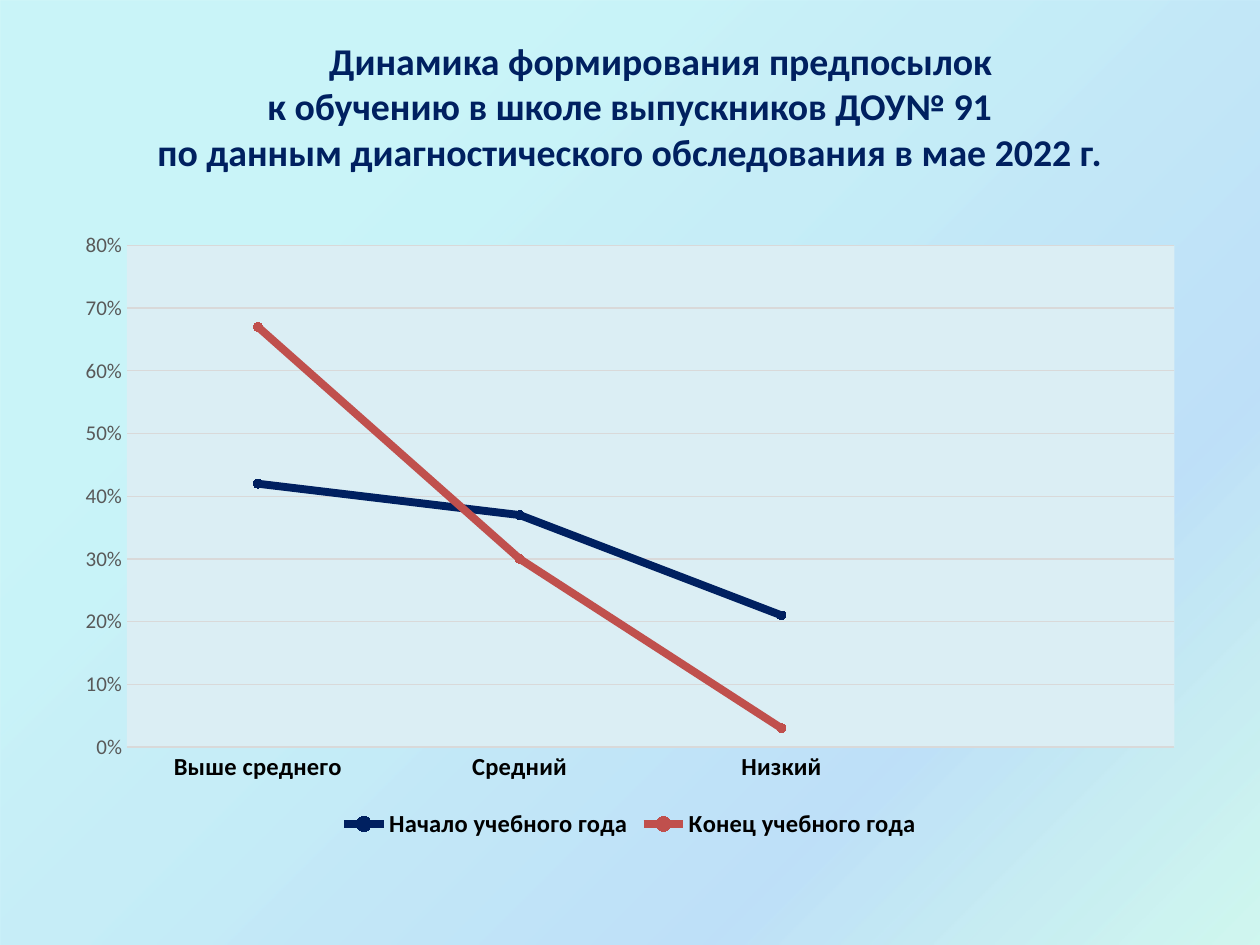
"""Build a slide with a line chart of school readiness at the start and end of the year."""
from dataclasses import dataclass

from lxml import etree
from pptx import Presentation
from pptx.chart.chart import Chart
from pptx.chart.data import CategoryChartData
from pptx.dml.color import RGBColor
from pptx.enum.chart import XL_CHART_TYPE, XL_LEGEND_POSITION, XL_MARKER_STYLE, XL_TICK_MARK
from pptx.enum.shapes import MSO_SHAPE
from pptx.enum.text import MSO_ANCHOR, PP_ALIGN
from pptx.oxml import parse_xml
from pptx.oxml.ns import nsdecls, qn
from pptx.slide import Slide
from pptx.text.text import Font
from pptx.util import Inches, Pt

LINE_MARKERS = XL_CHART_TYPE.LINE_MARKERS
LEGEND_BOTTOM = XL_LEGEND_POSITION.BOTTOM
CIRCLE = XL_MARKER_STYLE.CIRCLE
NO_TICK = XL_TICK_MARK.NONE
RECTANGLE = MSO_SHAPE.RECTANGLE
TOP = MSO_ANCHOR.TOP
CENTER = PP_ALIGN.CENTER


@dataclass(frozen=True)
class Theme:
    font: str = "Calibri"
    navy: str = "002060"
    red: str = "C0504D"
    label: str = "000000"
    scale: str = "595959"
    grid: str = "D9D9D9"
    plot: str = "DBEEF4"
    title_size: float = 21.6
    label_size: float = 14
    scale_size: float = 12


@dataclass(frozen=True)
class GradientStop:
    position: int
    color: str
    opacity: int


@dataclass(frozen=True)
class Period:
    name: str
    shares: tuple[float | None, ...]
    color: str


THEME = Theme()
BACKDROP = (
    GradientStop(25, "21D6E0", 23),
    GradientStop(75, "0087E6", 25),
    GradientStop(100, "03D4A8", 18),
    GradientStop(100, "005CBF", 26),
)
TITLE_LINES = (
    "Динамика формирования предпосылок",
    "к обучению в школе выпускников ДОУ№ 91",
    "по данным диагностического обследования в мае 2022 г.",
)
LEVELS = ("Выше среднего", "Средний", "Низкий", "")
PERIODS = (
    Period("Начало учебного года", (0.42, 0.37, 0.21, None), THEME.navy),
    Period("Конец учебного года", (0.67, 0.3, 0.03, None), THEME.red),
)


def style_font(font: Font, size: float, color: str, bold: bool) -> None:
    """Set the typeface, size, colour and weight."""
    font.name = THEME.font
    font.size = Pt(size)
    font.bold = bold
    font.color.rgb = RGBColor.from_string(color)


def draw_backdrop(slide: Slide, width: int, height: int) -> None:
    """Cover the slide with a translucent diagonal gradient."""
    backdrop = slide.shapes.add_shape(RECTANGLE, 0, 0, width, height)
    backdrop.shadow.inherit = False
    backdrop.line.fill.background()
    backdrop.fill.background()
    stops = "".join(
        f'<a:gs pos="{stop.position * 1000}"><a:srgbClr val="{stop.color}">'
        f'<a:alpha val="{stop.opacity * 1000}"/></a:srgbClr></a:gs>'
        for stop in BACKDROP
    )
    gradient = parse_xml(
        f'<a:gradFill {nsdecls("a")} rotWithShape="1"><a:gsLst>{stops}</a:gsLst>'
        '<a:lin ang="2700000" scaled="0"/></a:gradFill>'
    )
    properties = backdrop.fill._xPr
    properties.replace(properties.find(qn("a:noFill")), gradient)


def draw_title(slide: Slide) -> None:
    """Write the centred heading with its first line indented."""
    heading = slide.shapes.add_textbox(Inches(0.5), Inches(0.25), Inches(9), Inches(1.25))
    frame = heading.text_frame
    frame.word_wrap = True
    frame.vertical_anchor = TOP
    paragraph = frame.paragraphs[0]
    paragraph.text = "\v".join(TITLE_LINES)
    paragraph.alignment = CENTER
    properties = paragraph._p.get_or_add_pPr()
    properties.set("marL", "0")
    properties.set("indent", str(Inches(0.49)))
    style_font(paragraph.font, THEME.title_size, THEME.navy, True)


def style_axes(chart: Chart) -> None:
    """Format the level axis, the percentage axis and its gridlines."""
    grid_color = RGBColor.from_string(THEME.grid)
    levels, shares = chart.category_axis, chart.value_axis
    for axis in (levels, shares):
        axis.major_tick_mark = axis.minor_tick_mark = NO_TICK
    style_font(levels.tick_labels.font, THEME.label_size, THEME.label, True)
    style_font(shares.tick_labels.font, THEME.scale_size, THEME.scale, False)
    shares.minimum_scale, shares.maximum_scale, shares.major_unit = 0, 0.8, 0.1
    shares.tick_labels.number_format = "0%"
    shares.tick_labels.number_format_is_linked = False
    shares.format.line.fill.background()
    for line in (levels.format.line, shares.major_gridlines.format.line):
        line.color.rgb = grid_color
        line.width = Pt(0.75)


def draw_chart(slide: Slide) -> None:
    """Plot the share of children on each level in both periods."""
    readiness = CategoryChartData(number_format="0%")
    readiness.categories = LEVELS
    for period in PERIODS:
        readiness.add_series(period.name, period.shares)
    chart = slide.shapes.add_chart(
        LINE_MARKERS, Inches(0.5), Inches(1.75), Inches(9), Inches(4.95), readiness
    ).chart
    chart.has_title = False
    chart.font.name = THEME.font
    chart.has_legend = True
    chart.legend.position = LEGEND_BOTTOM
    chart.legend.include_in_layout = False
    style_font(chart.legend.font, THEME.label_size, THEME.label, True)
    style_axes(chart)

    plot = chart.plots[0]
    plot.vary_by_categories = False
    for series, period in zip(plot.series, PERIODS):
        color = RGBColor.from_string(period.color)
        series.smooth = False
        series.format.line.color.rgb = color
        series.format.line.width = Pt(4.5)
        series.marker.style = CIRCLE
        series.marker.size = 5
        series.marker.format.fill.solid()
        series.marker.format.fill.fore_color.rgb = color
        series.marker.format.line.color.rgb = color

    area = etree.SubElement(chart._chartSpace.chart.plotArea, qn("c:spPr"))
    area.append(parse_xml(
        f'<a:solidFill {nsdecls("a")}><a:srgbClr val="{THEME.plot}"/></a:solidFill>'
    ))


def main() -> None:
    """Assemble and save the presentation."""
    presentation = Presentation()
    presentation.slide_width = Inches(10)
    presentation.slide_height = Inches(7.5)
    slide = presentation.slides.add_slide(presentation.slide_layouts[6])
    draw_backdrop(slide, presentation.slide_width, presentation.slide_height)
    draw_title(slide)
    draw_chart(slide)
    presentation.save("out.pptx")


if __name__ == "__main__":
    main()
